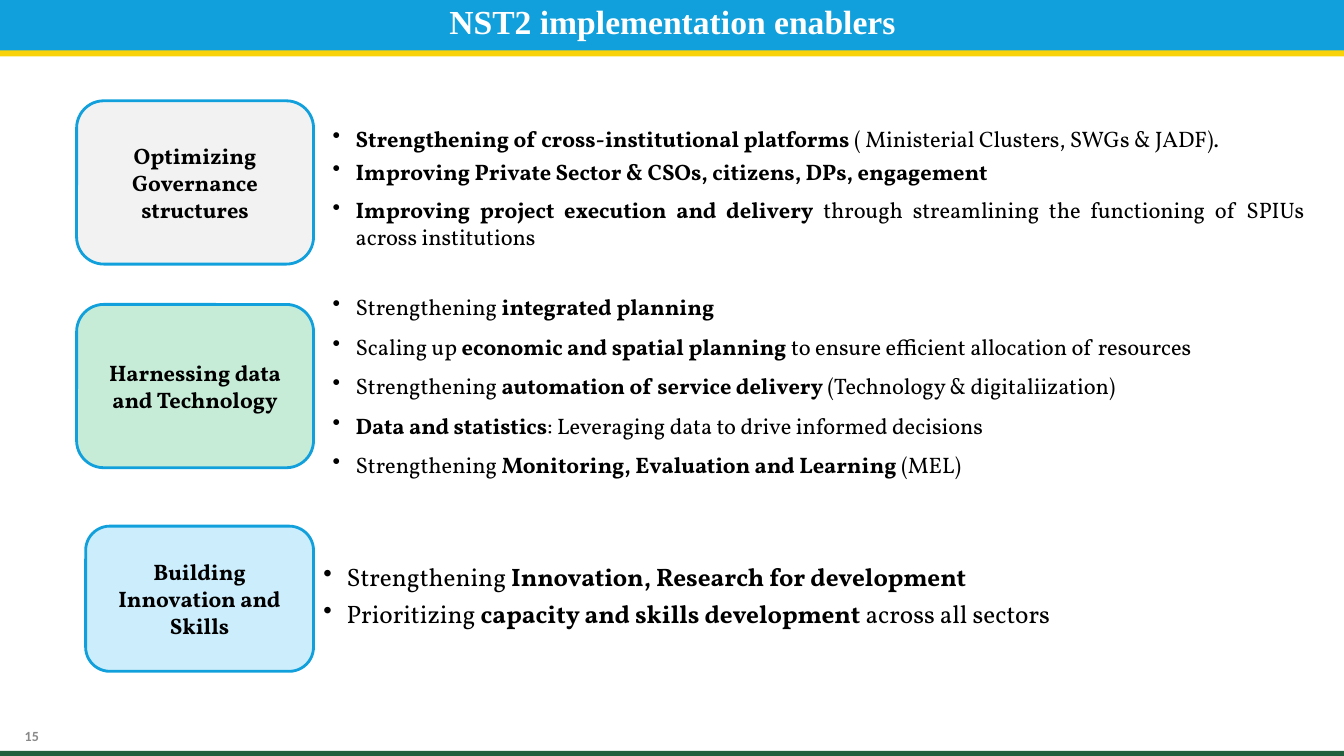
"""Builds the slide on the enablers of NST2 implementation."""
from lxml import etree
from pptx import Presentation
from pptx import util as u
from pptx.dml.color import RGBColor
from pptx.enum import shapes, text
from pptx.oxml.ns import qn

BLUE = "11A0DB"
INDENT = u.Inches(0.23)


def color(value):
    return RGBColor.from_string(value)


def write(para, marked, size, font="Vollkorn", ink="000000"):
    for index, part in enumerate(marked.split("**")):
        if part:
            span = para.add_run()
            span.text = part
            span.font.color.rgb = color(ink)
            look = {"name": font, "size": u.Pt(size), "bold": index % 2 == 1}
            for key, value in look.items():
                setattr(span.font, key, value)


deck = Presentation()
deck.slide_width, deck.slide_height = u.Inches(13.33), u.Inches(7.5)
page = deck.slides.add_slide(deck.slide_layouts[6])

for top, height, fill in [(0.06, 0.5, "F9D20A"), (0, 0.5, BLUE), (7.45, 0.05, "20603E")]:
    band = page.shapes.add_shape(shapes.MSO_SHAPE.RECTANGLE, 0, u.Inches(top),
                                 deck.slide_width, u.Inches(height))
    band.shadow.inherit = False
    band.fill.solid()
    band.fill.fore_color.rgb = color(fill)
    band.line.fill.background()

captions = [
    ((0.24, 7.22, 0.15, 0.15), "**15**", 10, "Calibri", "898989", False, 1),
    ((2.42, 0.05, 8.5, 0.64), "**NST2 implementation enablers**", 24, "Times New Roman",
     "FFFFFF", True, 0.9),
]
for place, words, size, font, ink, wrap, spacing in captions:
    frame = page.shapes.add_textbox(*map(u.Inches, place)).text_frame
    layout = {"margin_left": 0, "margin_top": 0, "margin_right": 0, "margin_bottom": 0,
              "word_wrap": wrap}
    for key, value in layout.items():
        setattr(frame, key, value)
    para = frame.paragraphs[0]
    para.alignment = text.PP_ALIGN.CENTER
    para.line_spacing = spacing
    write(para, words, size, font, ink)

enablers = [
    ((0.76, 1, 2.35, 1.62), "F2F2F2", "Optimizing Governance structures"),
    ((0.76, 3.02, 2.35, 1.62), "C6ECD8", "Harnessing data and Technology"),
    ((0.85, 5.22, 2.26, 1.44), "CCEDFB", "Building Innovation and Skills"),
]
for place, fill, name in enablers:
    box = page.shapes.add_shape(shapes.MSO_SHAPE.ROUNDED_RECTANGLE, *map(u.Inches, place))
    box.shadow.inherit = False
    box.fill.solid()
    box.fill.fore_color.rgb = color(fill)
    box.line.color.rgb = color(BLUE)
    box.line.width = u.Pt(2)
    box.text_frame.word_wrap = True
    box.text_frame.vertical_anchor = text.MSO_ANCHOR.MIDDLE
    para = box.text_frame.paragraphs[0]
    para.alignment = text.PP_ALIGN.CENTER
    write(para, f"**{name}**", 16)

measures = [
    ((3.2, 1.19, 9.6, 0.71), 16, 4.5, [
        "**Strengthening of cross-institutional platforms **"
        "( Ministerial Clusters, SWGs & JADF).",
        "**Improving Private Sector & CSOs, citizens, DPs, engagement**"]),
    ((3.2, 1.9, 9.84, 1), 16, 4.5, [
        "**Improving project execution and delivery **"
        "through streamlining the functioning of SPIUs across institutions"]),
    ((3.2, 2.86, 9.6, 1.95), 16, 9, [
        "Strengthening **integrated planning**",
        "Scaling up **economic and spatial planning **"
        "to ensure efficient allocation of resources",
        "Strengthening **automation of service delivery **(Technology & digitaliization)",
        "**Data and statistics**: Leveraging data to drive informed decisions",
        "Strengthening **Monitoring, Evaluation and Learning **(MEL)"]),
    ((3.11, 5.52, 8.96, 1.12), 18, 4.5, [
        "Strengthening **Innovation, Research for development**",
        "Prioritizing **capacity and skills development **across all sectors"]),
]
for place, size, gap, points in measures:
    frame = page.shapes.add_textbox(*map(u.Inches, place)).text_frame
    frame.word_wrap = True
    frame.auto_size = text.MSO_AUTO_SIZE.SHAPE_TO_FIT_TEXT
    for index, point in enumerate(points):
        para = frame.add_paragraph() if index else frame.paragraphs[0]
        para.alignment = text.PP_ALIGN.JUSTIFY
        para.space_before = u.Pt(gap if index else 0)
        properties = para._p.get_or_add_pPr()
        properties.set("marL", str(INDENT))
        properties.set("indent", str(-INDENT))
        etree.SubElement(properties, qn("a:buChar")).set("char", "•")
        write(para, point, size)

deck.save("out.pptx")
